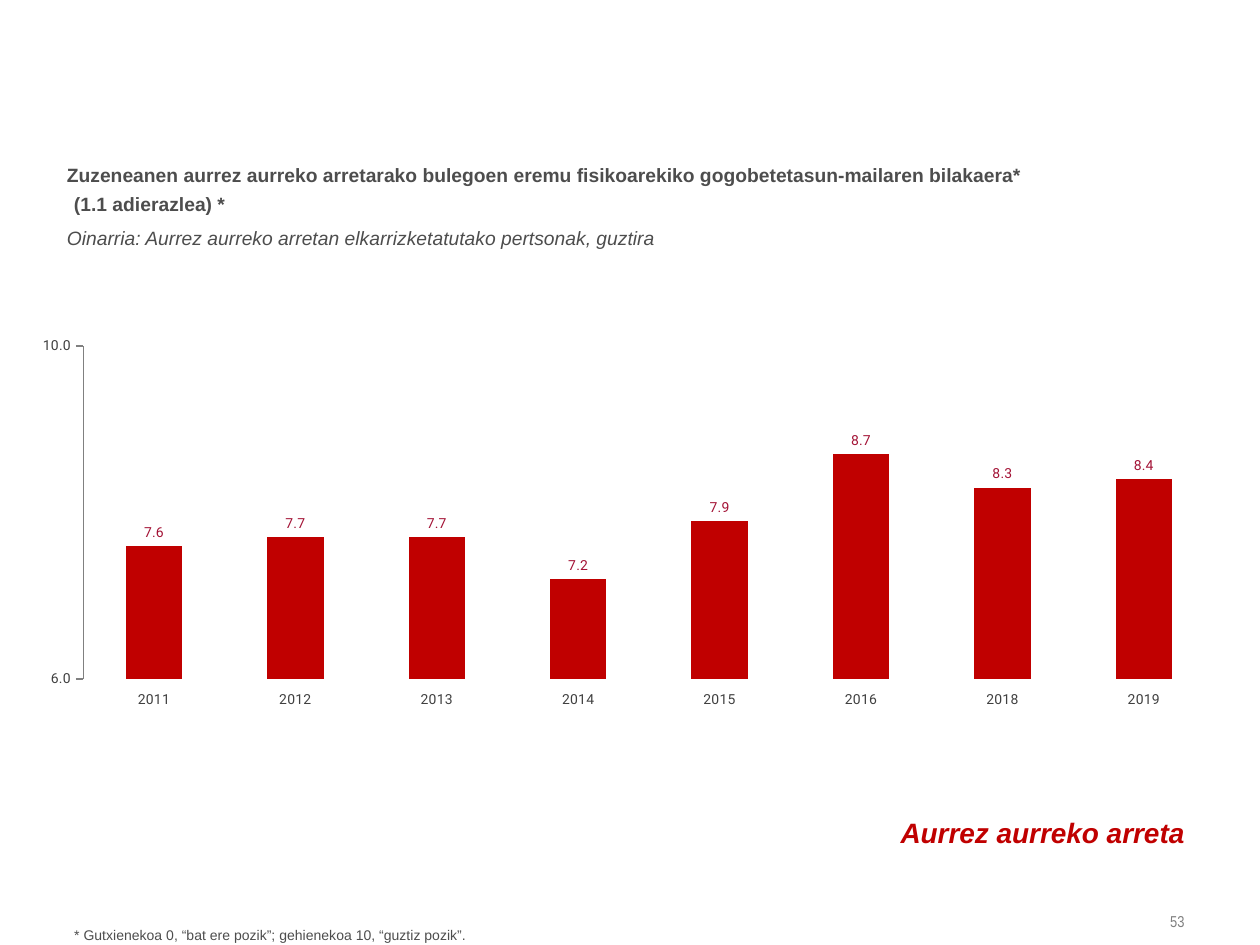
"""Build the slide on satisfaction with the physical space of face-to-face offices."""
from pptx import Presentation
from pptx import util as u
from pptx.chart import data as chart_data
from pptx.dml.color import RGBColor
from pptx.enum import chart as charts, text

RED = RGBColor(0xC0, 0x00, 0x00)
LABEL_RED = RGBColor(0xA3, 0x12, 0x35)
DARK = RGBColor(0x4D, 0x4D, 0x4D)
AXIS_TEXT = RGBColor(0x40, 0x40, 0x40)
GREY = RGBColor(0x80, 0x80, 0x80)
LEFT = text.PP_ALIGN.LEFT
RIGHT = text.PP_ALIGN.RIGHT
INSETS = (0.04, 0.05, 0.1, 0.05)

BOLD = {"bold": True}
HEADING = [
    [("Zuzeneanen aurrez aurreko arretarako bulegoen eremu fisikoarekiko "
      "gogobetetasun-mailaren bilakaera*", BOLD)],
    [(" ", {"size": 18, "name": "Calibri"}),
     ("(1.1 adierazlea) *", BOLD),
     ("\n", {}),
     ("Oinarria: Aurrez aurreko arretan elkarrizketatutako pertsonak, guztira",
      {"italic": True})],
]
FOOTNOTE = [[("* Gutxienekoa 0, “bat ere pozik”; gehienekoa 10, “guztiz pozik”.", {})]]
SECTION = [[("Aurrez aurreko arreta", {"bold": True, "italic": True})]]
PAGE_NUMBER = [[("53", {})]]
SCORES = {"2011": 7.6, "2012": 7.7, "2013": 7.7, "2014": 7.2,
          "2015": 7.9, "2016": 8.7, "2018": 8.3, "2019": 8.4}
PLOT = {"x": 0.03, "y": 0.02, "w": 0.97, "h": 0.91}


def write(box, content, size, color=DARK, name="Arial", align=LEFT, line=None,
          insets=INSETS, anchor=text.MSO_ANCHOR.TOP):
    """Fill a box with paragraphs made of formatted spans."""
    frame = box.text_frame
    frame.word_wrap = True
    frame.auto_size = text.MSO_AUTO_SIZE.NONE
    frame.vertical_anchor = anchor
    (frame.margin_left, frame.margin_top,
     frame.margin_right, frame.margin_bottom) = map(u.Inches, insets)
    for index, spans in enumerate(content):
        para = frame.add_paragraph() if index else frame.paragraphs[0]
        para.alignment = align
        if line:
            para.line_spacing = u.Pt(line)
        for words, style in spans:
            if words == "\n":
                para.add_line_break()
                continue
            span = para.add_run()
            span.text = words
            span.font.name = style.get("name", name)
            span.font.size = u.Pt(style.get("size", size))
            span.font.bold = style.get("bold", False)
            span.font.italic = style.get("italic", False)
            span.font.color.rgb = color


def style_axis(axis):
    """Give an axis small labels, outside ticks and no gridlines."""
    axis.has_major_gridlines = False
    axis.major_tick_mark = charts.XL_TICK_MARK.OUTSIDE
    axis.minor_tick_mark = charts.XL_TICK_MARK.NONE
    axis.tick_labels.font.size = u.Pt(8)
    axis.tick_labels.font.color.rgb = AXIS_TEXT


def add_score_chart(page):
    """Add the column chart of yearly scores."""
    data = chart_data.CategoryChartData(number_format="0.0")
    data.categories = list(SCORES)
    data.add_series("Series 1", list(SCORES.values()))
    chart = page.shapes.add_chart(
        charts.XL_CHART_TYPE.COLUMN_CLUSTERED, u.Inches(0.34), u.Inches(2.68),
        u.Inches(9.3), u.Inches(2.94), data).chart
    chart.has_legend = False
    chart.has_title = False
    chart.font.name = "Roboto"
    chart.font.size = u.Pt(10)
    chart.font.color.rgb = AXIS_TEXT

    style_axis(chart.category_axis)
    chart.category_axis.format.line.fill.background()
    scale = chart.value_axis
    style_axis(scale)
    scale.minimum_scale, scale.maximum_scale, scale.major_unit = 6, 10, 4
    scale.tick_labels.number_format = "#,##0.0"
    scale.tick_labels.number_format_is_linked = False
    scale.format.line.color.rgb = GREY
    scale.format.line.width = u.Pt(0.75)

    plot = chart.plots[0]
    plot.gap_width = 150
    plot.vary_by_categories = False
    bars = plot.series[0]
    bars.format.fill.solid()
    bars.format.fill.fore_color.rgb = RED
    labels = bars.data_labels
    labels.show_value = True
    labels.number_format = "0.0"
    labels.number_format_is_linked = False
    labels.position = charts.XL_LABEL_POSITION.OUTSIDE_END
    labels.font.size = u.Pt(8)
    labels.font.color.rgb = LABEL_RED

    area = chart.element.chart.plotArea
    for old in area.findall("{*}layout"):
        area.remove(old)
    layout = area.makeelement(area.tag.replace("plotArea", "layout"), {})
    area.insert(0, layout)

    def add_child(parent, tag, value=None):
        child = parent.makeelement(area.tag.replace("plotArea", tag),
                                   {} if value is None else {"val": str(value)})
        parent.append(child)
        return child

    manual = add_child(layout, "manualLayout")
    add_child(manual, "layoutTarget", "inner")
    add_child(manual, "xMode", "edge")
    add_child(manual, "yMode", "edge")
    for tag, value in PLOT.items():
        add_child(manual, tag, value)


def main():
    """Assemble and save the deck."""
    deck = Presentation()
    deck.slide_width, deck.slide_height = u.Inches(10), u.Inches(7.5)
    page = deck.slides.add_slide(deck.slide_layouts[5])

    title = page.shapes.title
    title.left, title.top, title.width, title.height = map(
        u.Inches, (0.49, 1.18, 9.01, 0.86))
    write(title, HEADING, 11, line=18)

    def add_box(*place):
        return page.shapes.add_textbox(*map(u.Inches, place))

    write(add_box(8.7, 7.17, 0.8, 0.28), PAGE_NUMBER, 9, color=GREY,
          name="Arial Narrow", align=RIGHT, insets=(0.1, 0.05, 0.1, 0.05),
          anchor=text.MSO_ANCHOR.MIDDLE)
    write(add_box(0.49, 7.16, 9.01, 0.38), FOOTNOTE, 8, line=20,
          insets=(0.1, 0.05, 0.1, 0.05))
    write(add_box(4.71, 6.44, 4.79, 0.35), SECTION, 16, color=RED,
          align=RIGHT, line=18)
    add_score_chart(page)
    deck.save("out.pptx")


if __name__ == "__main__":
    main()
